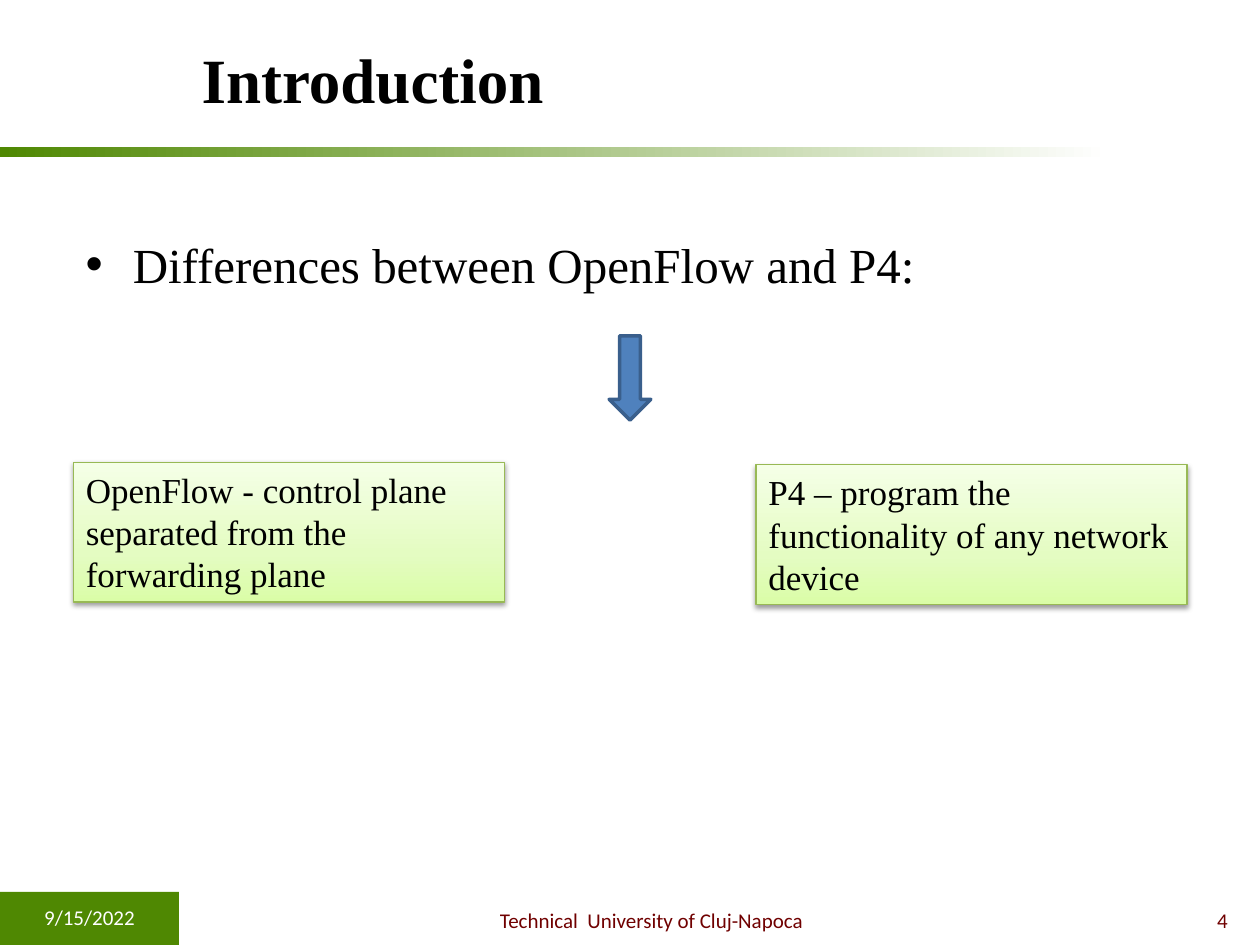
from lxml import etree
from pptx import Presentation
from pptx.dml.color import RGBColor
from pptx.enum.shapes import MSO_SHAPE
from pptx.enum.text import MSO_ANCHOR, MSO_AUTO_SIZE, PP_ALIGN
from pptx.oxml.ns import qn
from pptx.util import Cm, Pt

RECTANGLE, DOWN_ARROW = MSO_SHAPE.RECTANGLE, MSO_SHAPE.DOWN_ARROW
LEFT, CENTER, RIGHT = PP_ALIGN.LEFT, PP_ALIGN.CENTER, PP_ALIGN.RIGHT
TOP, MIDDLE = MSO_ANCHOR.TOP, MSO_ANCHOR.MIDDLE
FIT_SHAPE, NO_FIT = MSO_AUTO_SIZE.SHAPE_TO_FIT_TEXT, MSO_AUTO_SIZE.NONE

GREEN, MAROON, WHITE, BLACK = "4F8802", "700000", "FFFFFF", "000000"
LIME_STOPS = [(0, "DAFDA7"), (35, "E4FCC2"), (100, "F5FFE7")]


def color(value):
    return RGBColor.from_string(value)


def add_element(parent, tag, **attributes):
    child = etree.SubElement(parent, qn(tag))
    for key, value in attributes.items():
        child.set(key, str(value))
    return child


class SlideBuilder:
    heading_font = "Times New Roman"
    footer_font = "Calibri"

    def __init__(self, slide):
        self.slide = slide

    def place(self, shape, box):
        shape.left, shape.top, shape.width, shape.height = map(Cm, box)

    def set_text(self, shape, text, size, font, ink, align=LEFT, anchor=TOP,
                 bold=False, fit=NO_FIT):
        frame = shape.text_frame
        frame.word_wrap = True
        frame.auto_size = fit
        frame.vertical_anchor = anchor
        frame.text = text
        paragraph = frame.paragraphs[0]
        paragraph.alignment = align
        paragraph.space_before = Pt(0)
        paragraph.font.size = Pt(size)
        paragraph.font.name = font
        paragraph.font.bold = bold
        paragraph.font.color.rgb = color(ink)

    def title(self, text, box):
        title = self.slide.shapes.title
        self.place(title, box)
        self.set_text(title, text, 36, self.heading_font, BLACK,
                      anchor=MIDDLE, bold=True)

    def bullet(self, text, box):
        body = self.slide.placeholders[1]
        self.place(body, box)
        properties = body.text_frame.paragraphs[0]._p.get_or_add_pPr()
        properties.set("marL", str(Cm(1.27)))
        properties.set("indent", str(-Cm(1.27)))
        add_element(properties, "a:buFont", typeface="Arial")
        add_element(properties, "a:buChar", char="•")
        self.set_text(body, text, 28, self.heading_font, BLACK, fit=FIT_SHAPE)

    def footer(self, text, box, ink, align):
        label = self.slide.shapes.add_textbox(*map(Cm, box))
        self.set_text(label, text, 12, self.footer_font, ink, align, MIDDLE)

    def shape(self, kind, box, fill=None, line=None, line_width=0.75):
        shape = self.slide.shapes.add_shape(kind, *map(Cm, box))
        shape.shadow.inherit = False
        if fill:
            shape.fill.solid()
            shape.fill.fore_color.rgb = color(fill)
        if line:
            shape.line.color.rgb = color(line)
            shape.line.width = Pt(line_width)
        else:
            shape.line.fill.background()
        return shape

    def gradient(self, shape, stops, angle):
        shape.fill.gradient()
        gradient = shape._element.spPr.find(qn("a:gradFill"))
        stop_list = gradient.find(qn("a:gsLst"))
        for old_stop in list(stop_list):
            stop_list.remove(old_stop)
        for position, value in stops:
            stop = add_element(stop_list, "a:gs", pos=position * 1000)
            add_element(stop, "a:srgbClr", val=value)
        gradient.find(qn("a:lin")).set("ang", str(angle * 60000))

    def card(self, text, box):
        card = self.shape(RECTANGLE, box, line="98B955")
        self.gradient(card, LIME_STOPS, 270)
        effects = card._element.spPr.find(qn("a:effectLst"))
        shadow = add_element(effects, "a:outerShdw", blurRad=Pt(3.1), dist=Pt(1.6),
                             dir=90 * 60000, rotWithShape=0)
        shade = add_element(shadow, "a:srgbClr", val=BLACK)
        add_element(shade, "a:alpha", val=38000)
        self.set_text(card, text, 20, self.heading_font, BLACK, fit=FIT_SHAPE)


def main():
    presentation = Presentation()
    presentation.slide_width, presentation.slide_height = Cm(25.4), Cm(19.05)
    builder = SlideBuilder(presentation.slides.add_slide(presentation.slide_layouts[1]))

    # Green date block and fading rule under the title
    builder.shape(RECTANGLE, (0, 17.98, 3.61, 1.07), GREEN)
    title_rule = builder.shape(RECTANGLE, (0, 2.97, 25.4, 0.2))
    builder.gradient(title_rule, [(12, WHITE), (100, GREEN)], 180)

    # Title and list
    builder.title("Introduction", (3.81, 0.2, 17.98, 2.74))
    builder.bullet("Differences between OpenFlow and P4:", (1.47, 4.6, 21.79, 1.45))

    # Footer
    builder.footer("9/15/2022", (0, 17.98, 3.61, 1.02), WHITE, CENTER)
    builder.footer("Technical  University of Cluj-Napoca",
                   (3.61, 18.03, 19.05, 1.02), MAROON, CENTER)
    builder.footer("4", (22.66, 18.03, 2.34, 1.02), MAROON, RIGHT)

    # Comparison
    builder.shape(DOWN_ARROW, (12.28, 6.77, 0.84, 1.7), "4F81BD", "3A5F8C", 2)
    builder.card("OpenFlow - control plane separated from the forwarding plane",
                 (1.48, 9.32, 8.69, 2.82))
    builder.card("P4 – program the functionality of any network device",
                 (15.24, 9.37, 8.69, 2.82))

    presentation.save("out.pptx")


if __name__ == "__main__":
    main()
